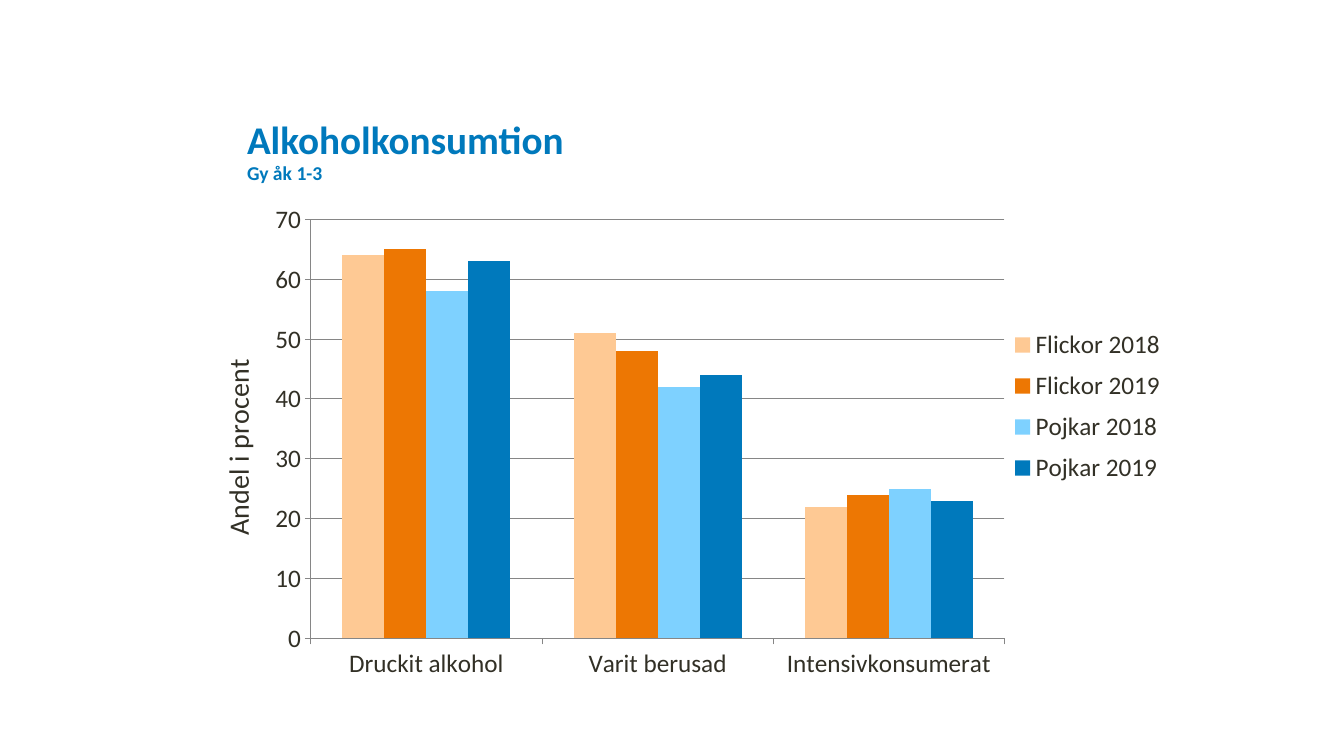
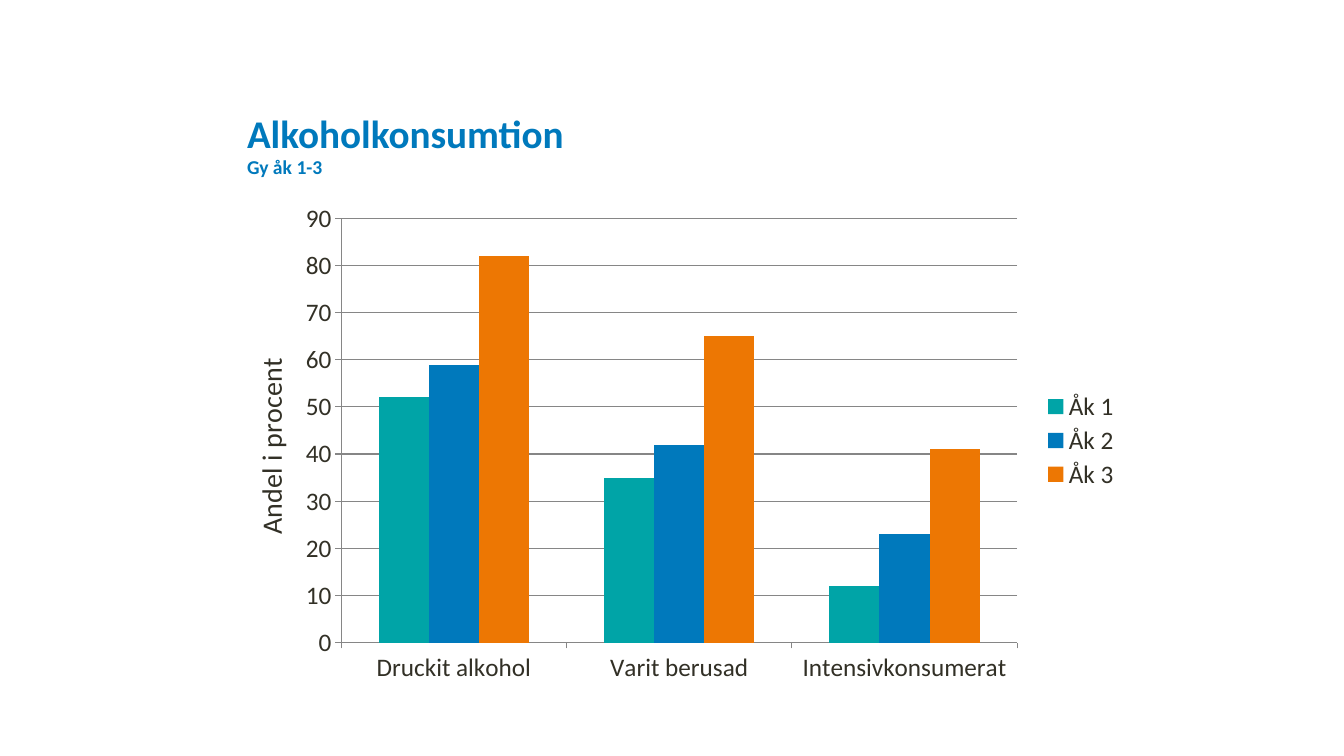
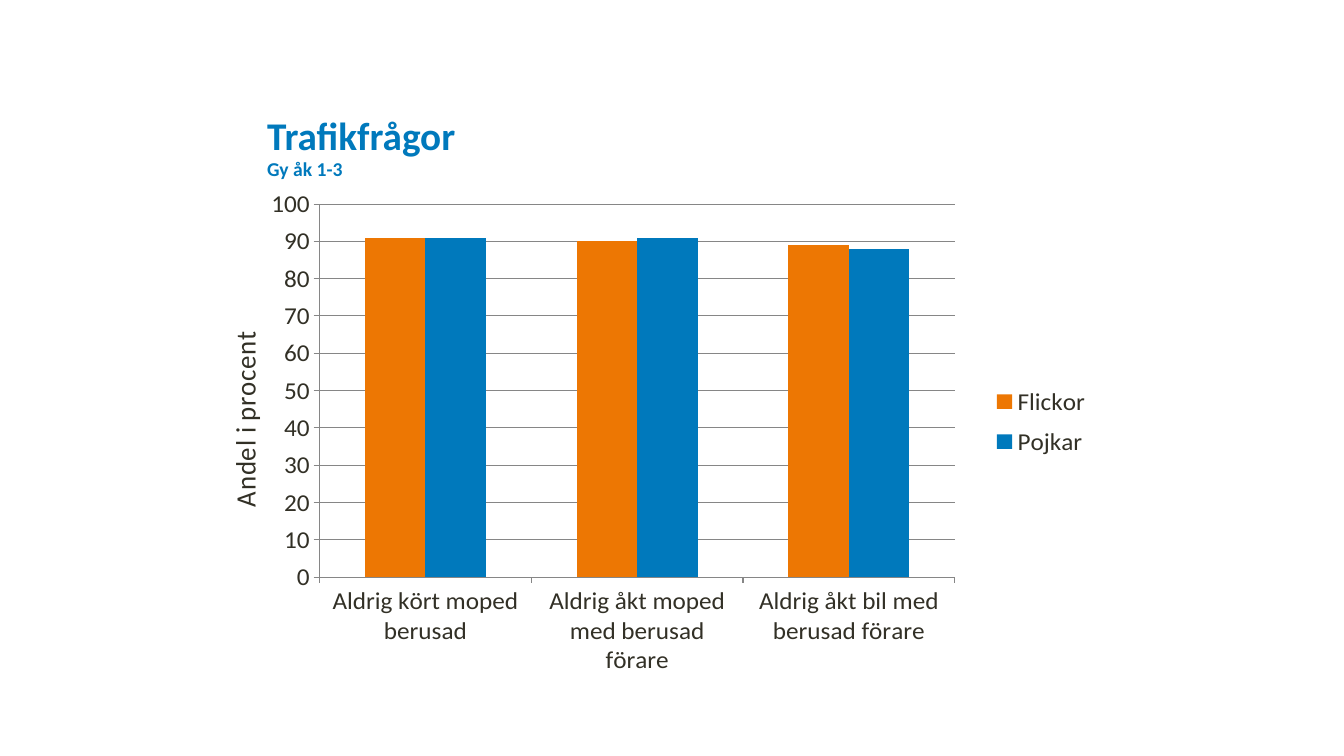
from lxml.etree import SubElement
from pptx import Presentation
from pptx.chart.data import CategoryChartData
from pptx.dml.color import RGBColor
from pptx.enum.chart import XL_CHART_TYPE as ChartType, XL_LEGEND_POSITION as LegendPos
from pptx.enum.chart import XL_TICK_MARK as Tick
from pptx.enum.text import MSO_ANCHOR as Anchor, PP_ALIGN as Align
from pptx.oxml.ns import qn
from pptx.util import Inches, Pt

# Shared style
FONT = "Calibri"
BLUE, ORANGE, TEAL = "0079BC", "ED7703", "00A4A7"
PALE_BLUE, PALE_ORANGE = "7ED1FF", "FEC994"
TEXT, RULE = "323026", "868686"
SUBTITLE = "Gy åk 1-3"
AXIS_TITLE = "Andel i procent"
DRINKING = ["Druckit alkohol", "Varit berusad", "Intensivkonsumerat"]

# Content; boxes in inches, chart parts as shares of the chart
SLIDES = [
    dict(
        title="Alkoholkonsumtion", title_box=(2.35, 0.8, 8.62, 1.08),
        chart_box=(1.92, 1.88, 9.69, 4.95), cats=DRINKING, top=70,
        series=[("Flickor 2018", PALE_ORANGE, (64, 51, 22)),
                ("Flickor 2019", ORANGE, (65, 48, 24)),
                ("Pojkar 2018", PALE_BLUE, (58, 42, 25)),
                ("Pojkar 2019", BLUE, (63, 44, 23))],
        plot=(0.12, 0.06, 0.71, 0.84), legend=(0.83, 0.26, 0.17, 0.35),
        axis_title=(0.02, 0.33),
    ),
    dict(
        title="Alkoholkonsumtion", title_box=(2.35, 0.74, 8.62, 1.08),
        chart_box=(2.17, 1.92, 9, 4.95), cats=DRINKING, top=90,
        series=[("Åk 1", TEAL, (52, 35, 12)),
                ("Åk 2", BLUE, (59, 42, 23)),
                ("Åk 3", ORANGE, (82, 65, 41))],
        plot=(0.135, 0.05, 0.745, 0.85), legend=(0.9, 0.39, 0.1, 0.21),
        axis_title=(0.03, 0.32),
    ),
    dict(
        title="Trafikfrågor", title_box=(2.55, 0.7, 8.62, 1.14),
        chart_box=(2.09, 1.74, 9, 4.95), top=100,
        cats=["Aldrig kört moped berusad",
              "Aldrig åkt moped med berusad förare",
              "Aldrig åkt bil med berusad förare"],
        series=[("Flickor", ORANGE, (91, 90, 89)),
                ("Pojkar", BLUE, (91, 91, 88))],
        plot=(0.12, 0.06, 0.7, 0.78), legend=(0.85, 0.42, 0.13, 0.19),
        axis_title=(0.01, 0.33),
    ),
]


def rgb(value):
    return RGBColor.from_string(value)


def set_font(font, size, color, bold=False):
    font.name, font.size, font.bold = FONT, Pt(size), bold
    font.color.rgb = rgb(color)


def set_layout(parent, index, box, inner=False):
    """Place a chart part by shares of the chart's size."""
    for old in parent.findall(qn("c:layout")):
        parent.remove(old)
    layout = parent.makeelement(qn("c:layout"), {})
    parent.insert(index, layout)
    manual = SubElement(layout, qn("c:manualLayout"))
    values = [("layoutTarget", "inner")] if inner else []
    values += [("xMode", "edge"), ("yMode", "edge"), *zip("xywh", box)]
    for tag, value in values:
        SubElement(manual, qn("c:" + tag)).set("val", str(value))


def add_title(s, text, box):
    sp = s.shapes.title
    sp.left, sp.top, sp.width, sp.height = map(Inches, box)
    tf = sp.text_frame
    tf.word_wrap, tf.vertical_anchor = True, Anchor.BOTTOM
    p = tf.paragraphs[0]
    p.alignment, p.line_spacing = Align.LEFT, 0.9
    r = p.add_run()
    r.text = text
    set_font(r.font, 28, BLUE, True)
    p.add_line_break()
    r = p.add_run()
    r.text = SUBTITLE
    set_font(r.font, 14, BLUE, True)


def add_bars(s, chart_box, cats, series, top, plot, legend, axis_title):
    data = CategoryChartData()
    data.categories = cats
    for name, _, values in series:
        data.add_series(name, values)
    chart = s.shapes.add_chart(ChartType.COLUMN_CLUSTERED,
                               *map(Inches, chart_box), data).chart
    chart.has_title = False
    set_font(chart.font, 18, TEXT)

    # Bars
    bars = chart.plots[0]
    bars.gap_width, bars.overlap, bars.vary_by_categories = 150, 0, False
    for bar, (_, color, _) in zip(bars.series, series):
        bar.format.fill.solid()
        bar.format.fill.fore_color.rgb = rgb(color)

    # Axes
    cat_axis, val_axis = chart.category_axis, chart.value_axis
    val_axis.minimum_scale, val_axis.maximum_scale, val_axis.major_unit = 0, top, 10
    val_axis.has_major_gridlines = True
    for axis in (cat_axis, val_axis):
        axis.major_tick_mark, axis.minor_tick_mark = Tick.OUTSIDE, Tick.NONE
    for part in (cat_axis, val_axis, val_axis.major_gridlines):
        part.format.line.color.rgb = rgb(RULE)
        part.format.line.width = Pt(0.75)
    tf = val_axis.axis_title.text_frame
    tf.text = AXIS_TITLE
    set_font(tf.paragraphs[0].font, 20, TEXT)
    tf._txBody.bodyPr.set("rot", "-5400000")
    tf._txBody.bodyPr.set("vert", "horz")

    # Legend and placing
    chart.has_legend = True
    chart.legend.position = LegendPos.RIGHT
    chart.legend.include_in_layout = False
    set_font(chart.legend.font, 18, TEXT)
    root = chart._chartSpace
    set_layout(root.find(".//" + qn("c:plotArea")), 0, plot, inner=True)
    set_layout(root.find(".//" + qn("c:legend")), 1, legend)
    set_layout(root.find(".//" + qn("c:valAx") + "/" + qn("c:title")), 1, axis_title)


def main():
    prs = Presentation()
    prs.slide_width, prs.slide_height = Inches(13.33), Inches(7.5)
    for content in SLIDES:
        s = prs.slides.add_slide(prs.slide_layouts[5])
        parts = dict(content)
        add_title(s, parts.pop("title"), parts.pop("title_box"))
        add_bars(s, **parts)
    prs.save("out.pptx")


if __name__ == "__main__":
    main()
